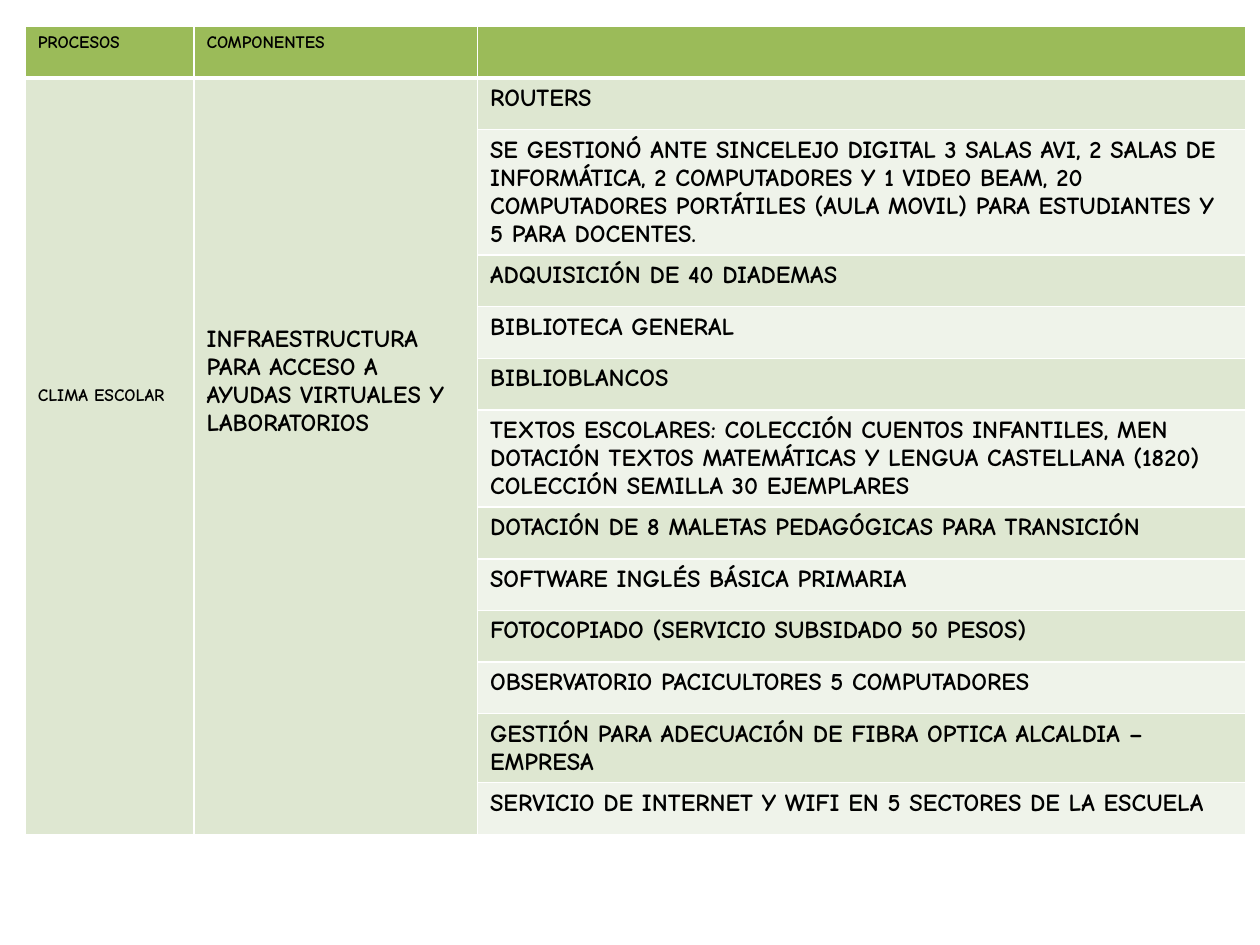
import pptx
import pptx.dml.color
import pptx.oxml
import pptx.oxml.ns
import pptx.util
from pptx.util import Inches

FONT = "Comic Neue"
HEADER_GREEN, BAND_DARK, BAND_LIGHT = "9BBB59", "DEE7D1", "EFF3EA"


def color(hex_value):
    return pptx.dml.color.RGBColor.from_string(hex_value)


def fill_cell(cell, text, size, fill, bottom_width=1):
    # Borders come before the fill in the cell properties
    properties = cell._tc.get_or_add_tcPr()
    for side, width in (("L", 1), ("R", 1), ("T", 1), ("B", bottom_width)):
        properties.append(pptx.oxml.parse_xml(
            f'<a:ln{side} {pptx.oxml.ns.nsdecls("a")} w="{pptx.util.Pt(width)}">'
            f'<a:solidFill><a:srgbClr val="FFFFFF"/></a:solidFill></a:ln{side}>'))
    cell.fill.solid()
    cell.fill.fore_color.rgb = color(fill)
    cell.text_frame.text = text
    font = cell.text_frame.paragraphs[0].font
    for target in [font] + [run.font for run in cell.text_frame.paragraphs[0].runs]:
        target.name = FONT
        target.size = pptx.util.Pt(size)
        target.bold = True
        target.color.rgb = color("000000")


headers = ["PROCESOS", "COMPONENTES", ""]
resources = [
    "ROUTERS",
    "SE GESTIONÓ ANTE SINCELEJO DIGITAL 3 SALAS AVI, 2 SALAS DE INFORMÁTICA, "
    "2 COMPUTADORES Y 1 VIDEO BEAM, 20 COMPUTADORES PORTÁTILES (AULA MOVIL) "
    "PARA ESTUDIANTES Y 5 PARA DOCENTES.",
    "ADQUISICIÓN DE 40 DIADEMAS",
    "BIBLIOTECA GENERAL",
    "BIBLIOBLANCOS",
    "TEXTOS ESCOLARES: COLECCIÓN CUENTOS INFANTILES, MEN DOTACIÓN TEXTOS "
    "MATEMÁTICAS Y LENGUA CASTELLANA (1820) COLECCIÓN SEMILLA 30 EJEMPLARES",
    "DOTACIÓN DE 8 MALETAS PEDAGÓGICAS PARA TRANSICIÓN",
    "SOFTWARE INGLÉS BÁSICA PRIMARIA",
    "FOTOCOPIADO (SERVICIO SUBSIDADO 50 PESOS)",
    "OBSERVATORIO PACICULTORES 5 COMPUTADORES",
    "GESTIÓN PARA ADECUACIÓN DE FIBRA OPTICA ALCALDIA – EMPRESA",
    "SERVICIO DE INTERNET Y WIFI EN 5 SECTORES DE LA ESCUELA",
]
# Text, size and top margin of the two cells that span all resources
spanning = [
    ("CLIMA ESCOLAR", 10, 2.44),
    ("INFRAESTRUCTURA PARA ACCESO A AYUDAS VIRTUALES Y LABORATORIOS", 14, 1.96),
]

presentation = pptx.Presentation()
presentation.slide_width = Inches(10)
presentation.slide_height = Inches(7.5)
slide = presentation.slides.add_slide(presentation.slide_layouts[6])

# Table grid
row_count = len(resources) + 1
row_height = Inches(0.41)
table = slide.shapes.add_table(
    row_count, 3, Inches(0.2), Inches(0.21), Inches(9.69), row_height * row_count).table
for column, width in zip(table.columns, (1.34, 2.25, 6.1)):
    column.width = Inches(width)
for row in table.rows:
    row.height = row_height

# Header row
for column, header in enumerate(headers):
    fill_cell(table.cell(0, column), header, 10, HEADER_GREEN, bottom_width=3)

# Process and component, each beside the whole list
for column, (text, size, top_margin) in enumerate(spanning):
    cell = table.cell(1, column)
    cell.merge(table.cell(row_count - 1, column))
    fill_cell(cell, text, size, BAND_DARK)
    cell.margin_top = Inches(top_margin)

# Resources in alternating bands
for row, resource in enumerate(resources, start=1):
    fill_cell(table.cell(row, 2), resource, 14, BAND_DARK if row % 2 else BAND_LIGHT)

presentation.save("out.pptx")
